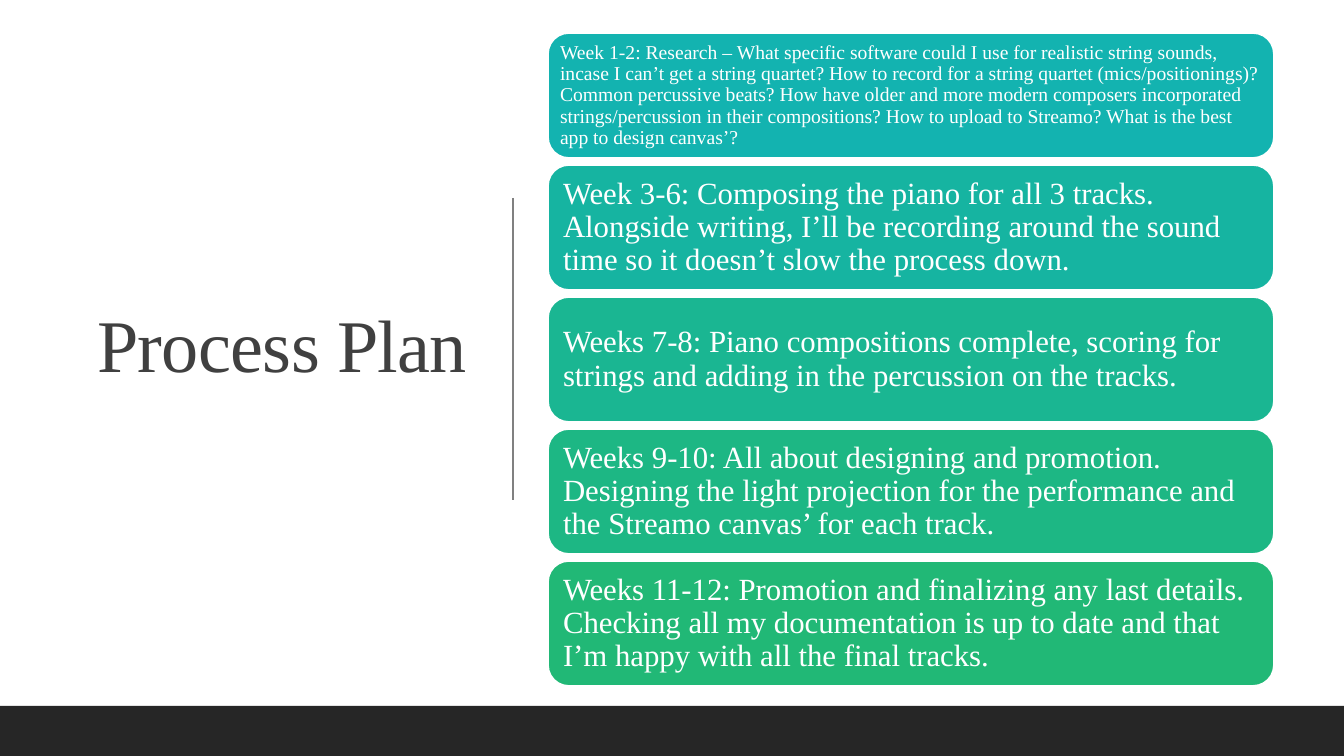
"""Build the Process Plan slide."""
from lxml import etree
from pptx import Presentation
from pptx import util as u
from pptx.dml.color import RGBColor
from pptx.enum import shapes, text
from pptx.oxml.ns import qn

TITLE = "Process Plan"
WEEKS = [
    ("Week 1-2: Research – What specific software could I use for realistic string sounds, "
     "incase I can’t get a string quartet? How to record for a string quartet "
     "(mics/positionings)? Common percussive beats? How have older and more modern composers "
     "incorporated strings/percussion in their compositions? How to upload to Streamo? "
     "What is the best app to design canvas’?", "13B3B0", 14, 6),
    ("Week 3-6: Composing the piano for all 3 tracks. Alongside writing, I’ll be recording "
     "around the sound time so it doesn’t slow the process down.", "16B4A1", 22, 9),
    ("Weeks 7-8: Piano compositions complete, scoring for strings and adding in the "
     "percussion on the tracks.", "1AB692", 22, 9),
    ("Weeks 9-10: All about designing and promotion. Designing the light projection for the "
     "performance and the Streamo canvas’ for each track.", "1DB784", 22, 9),
    ("Weeks 11-12: Promotion and finalizing any last details. Checking all my documentation "
     "is up to date and that I’m happy with all the final tracks.", "21B876", 22, 9),
]
INK = {"white": "FFFFFF", "title": "404040", "rule": "808080", "bar": "262626"}
FONT = "Times New Roman"
WIDE, HIGH = 1344, 756
LEFT, TOP, STEP = 548, 33, 132
CARD_W, CARD_H = 726, 125
BAR_Y = 706


def px(n):
    return u.Emu(round(n * 914400 / 100.8))


def rgb(code):
    return RGBColor.from_string(code)


def write(shape, words, size, color, align):
    frame = shape.text_frame
    frame.word_wrap = True
    frame.auto_size = text.MSO_AUTO_SIZE.NONE
    frame.vertical_anchor = text.MSO_ANCHOR.MIDDLE
    para = frame.paragraphs[0]
    para.alignment = align
    para.line_spacing = 0.9
    run = para.add_run()
    run.text = words
    run.font.name = FONT
    run.font.size = u.Pt(size)
    run.font.color.rgb = rgb(color)
    return run


def block(slide, kind, box, fill):
    shape = slide.shapes.add_shape(kind, *map(px, box))
    shape.shadow.inherit = False
    shape.fill.solid()
    shape.fill.fore_color.rgb = rgb(fill)
    shape.line.fill.background()
    return shape


def card(slide, row, words, fill, size, inset):
    box = (LEFT, TOP + row * STEP, CARD_W, CARD_H)
    shape = block(slide, shapes.MSO_SHAPE.ROUNDED_RECTANGLE, box, fill)
    shape.line.color.rgb = rgb(INK["white"])
    shape.line.width = u.Pt(1.25)
    frame = shape.text_frame
    frame.margin_left = frame.margin_right = px(inset)
    frame.margin_top = frame.margin_bottom = px(inset)
    write(shape, words, size, INK["white"], text.PP_ALIGN.LEFT)


def main():
    deck = Presentation()
    deck.slide_width, deck.slide_height = px(WIDE), px(HIGH)
    slide = deck.slides.add_slide(deck.slide_layouts[5])
    slide.background.fill.solid()
    slide.background.fill.fore_color.rgb = rgb(INK["white"])

    title = slide.shapes.title
    title.left, title.top, title.width, title.height = map(px, (71, 70, 406, 557))
    run = write(title, TITLE, 53, INK["title"], text.PP_ALIGN.RIGHT)
    run.font._element.set("spc", "-50")

    rule = slide.shapes.add_connector(
        shapes.MSO_CONNECTOR.STRAIGHT, *map(px, (513, 198, 513, 500)))
    rule.line.color.rgb = rgb(INK["rule"])
    rule.line.width = u.Pt(1)
    etree.SubElement(rule._element.spPr, qn("a:effectLst"))

    block(slide, shapes.MSO_SHAPE.RECTANGLE, (0, BAR_Y, WIDE, HIGH - BAR_Y), INK["bar"])
    for row, week in enumerate(WEEKS):
        card(slide, row, *week)
    deck.save("out.pptx")


if __name__ == "__main__":
    main()
